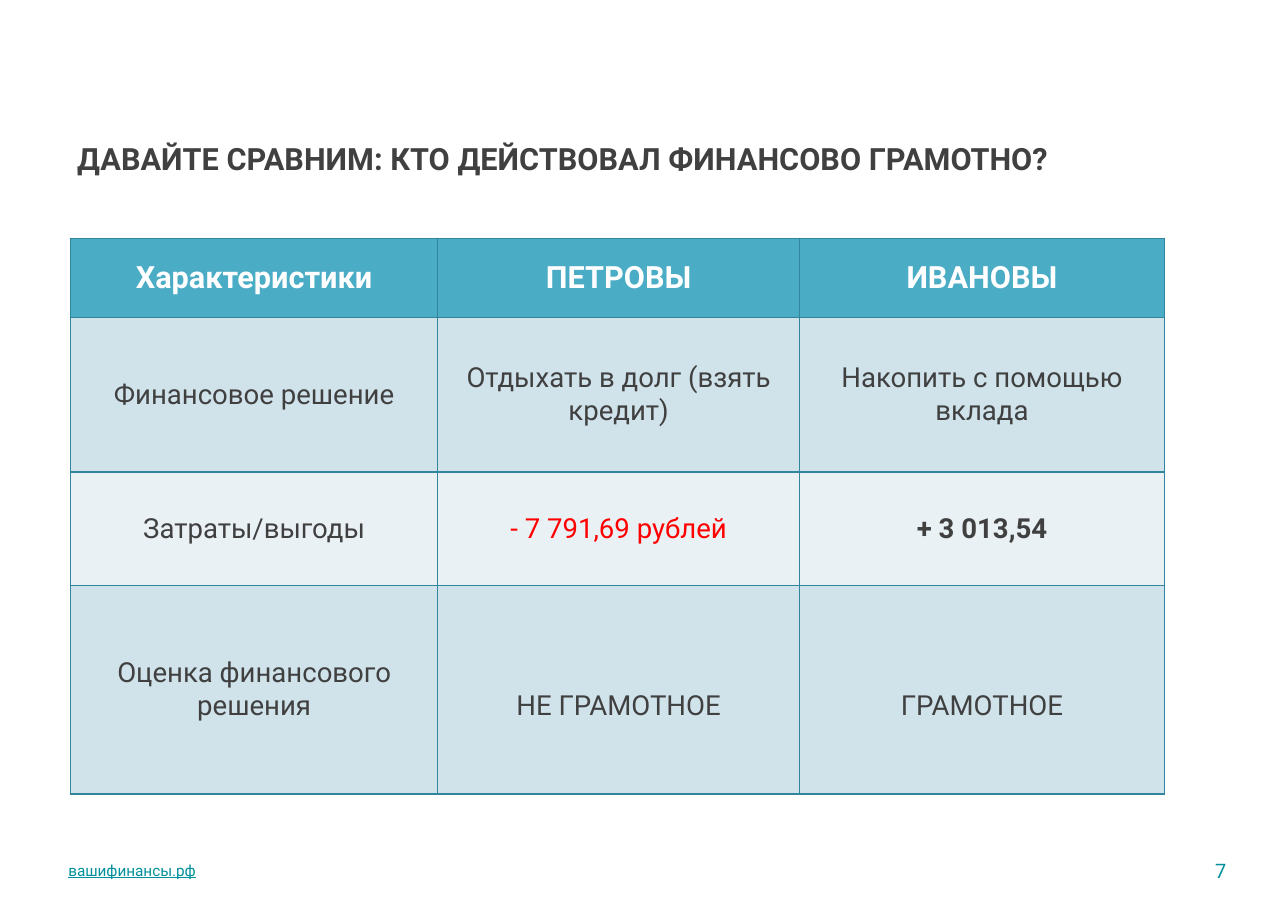
from dataclasses import dataclass

from lxml import etree
from pptx import Presentation
from pptx.dml.color import RGBColor
from pptx.enum.text import MSO_ANCHOR, PP_ALIGN
from pptx.oxml.ns import qn
from pptx.util import Inches, Pt

LEFT, CENTER, RIGHT = PP_ALIGN.LEFT, PP_ALIGN.CENTER, PP_ALIGN.RIGHT
TOP, MIDDLE = MSO_ANCHOR.TOP, MSO_ANCHOR.MIDDLE


@dataclass(frozen=True)
class Theme:
    """Colours, font and type sizes of the slide."""
    font: str = "Roboto"
    text: str = "404040"
    white: str = "FFFFFF"
    loss: str = "FF0000"
    accent: str = "00909B"
    header: str = "4BACC6"
    band_dark: str = "D0E3EA"
    band_light: str = "E9F1F5"
    border: str = "31859C"
    heading_size: int = 20
    body_size: int = 18
    number_size: int = 13
    footer_size: int = 10


THEME = Theme()
COLUMN_WIDTHS = [3.33, 3.28, 3.31]
ROW_HEIGHTS = [0.72, 1.4, 1.03, 1.89]
COMPARISON = [
    ["Характеристики", "ПЕТРОВЫ", "ИВАНОВЫ"],
    ["Финансовое решение", "Отдыхать в долг (взять кредит)", "Накопить с помощью вклада"],
    ["Затраты/выгоды", "- 7 791,69 рублей", "+ 3 013,54"],
    ["Оценка финансового решения", "НЕ ГРАМОТНОЕ", "ГРАМОТНОЕ"],
]
CELL_FORMATS = {
    (2, 1): {"color": THEME.loss},
    (2, 2): {"bold": True},
}
LOWERED_CELLS = {(3, 1), (3, 2)}
LOWERED_MARGIN = 0.34


def write_text(text_frame, text, size=THEME.body_size, color=THEME.text,
               bold=False, underline=False, align=LEFT):
    """Write one formatted paragraph into a text frame."""
    paragraph = text_frame.paragraphs[0]
    paragraph.alignment = align
    run = paragraph.add_run()
    run.text = text
    font = run.font
    font.name = THEME.font
    font.size = Pt(size)
    font.bold = bold
    font.underline = underline
    font.color.rgb = RGBColor.from_string(color)


def add_label(slide, box, text, anchor=MIDDLE, wrap=True, **text_format):
    """Place a text box with narrow margins."""
    frame = slide.shapes.add_textbox(*map(Inches, box)).text_frame
    frame.word_wrap = wrap
    frame.vertical_anchor = anchor
    frame.margin_left = frame.margin_right = Inches(0.05)
    frame.margin_top = frame.margin_bottom = Inches(0.05)
    write_text(frame, text, **text_format)


def style_cell(cell, fill):
    """Give a cell its borders, fill and vertical centring."""
    properties = cell._tc.get_or_add_tcPr()
    for side in ("lnL", "lnR", "lnT", "lnB"):
        line = etree.SubElement(properties, qn(f"a:{side}"), w=str(Pt(1)))
        solid = etree.SubElement(line, qn("a:solidFill"))
        etree.SubElement(solid, qn("a:srgbClr"), val=THEME.border)
    cell.fill.solid()
    cell.fill.fore_color.rgb = RGBColor.from_string(fill)
    cell.vertical_anchor = MIDDLE


def add_comparison(slide, left, top):
    """Build the table that compares the two families."""
    table = slide.shapes.add_table(
        len(ROW_HEIGHTS), len(COLUMN_WIDTHS), Inches(left), Inches(top),
        Inches(sum(COLUMN_WIDTHS)), Inches(sum(ROW_HEIGHTS))).table
    for column, width in zip(table.columns, COLUMN_WIDTHS):
        column.width = Inches(width)
    for row, height in zip(table.rows, ROW_HEIGHTS):
        row.height = Inches(height)
    header_format = {"size": THEME.heading_size, "color": THEME.white, "bold": True}
    for row_index, texts in enumerate(COMPARISON):
        band = THEME.band_dark if row_index % 2 else THEME.band_light
        fill = band if row_index else THEME.header
        for column_index, text in enumerate(texts):
            position = (row_index, column_index)
            cell = table.cell(*position)
            style_cell(cell, fill)
            if position in LOWERED_CELLS:
                cell.margin_top = Inches(LOWERED_MARGIN)
            text_format = CELL_FORMATS.get(position, {}) if row_index else header_format
            write_text(cell.text_frame, text, align=CENTER, **text_format)


def add_footer(slide, left, right, middle):
    """Place the site address and the page number on one line."""
    add_label(slide, (left, middle - 0.14, 3.97, 0.28), "вашифинансы.рф",
              size=THEME.footer_size, color=THEME.accent, underline=True)
    add_label(slide, (right - 0.32, middle - 0.16, 0.32, 0.32), "7", wrap=False,
              size=THEME.number_size, color=THEME.accent, align=RIGHT)


def main():
    """Build and save the presentation."""
    presentation = Presentation()
    presentation.slide_width = Inches(11.68)
    presentation.slide_height = Inches(8.26)
    slide = presentation.slides.add_slide(presentation.slide_layouts[6])
    add_label(slide, (0.65, 1.22, 10.45, 0.96),
              "ДАВАЙТЕ СРАВНИМ: КТО ДЕЙСТВОВАЛ ФИНАНСОВО ГРАМОТНО?",
              anchor=TOP, size=THEME.heading_size, bold=True)
    add_comparison(slide, 0.64, 2.16)
    add_footer(slide, 0.57, 11.17, 7.89)
    presentation.save("out.pptx")


if __name__ == "__main__":
    main()
